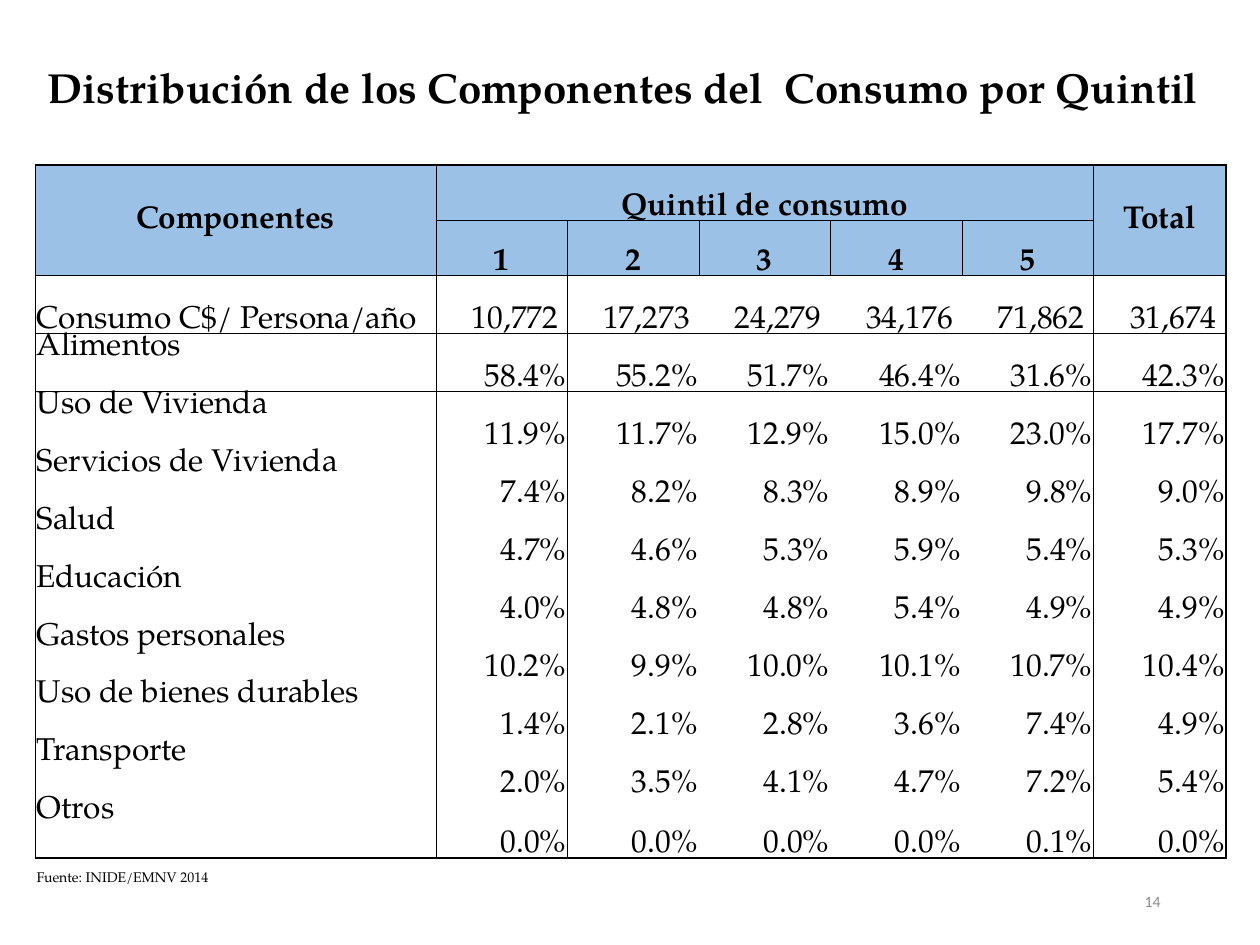
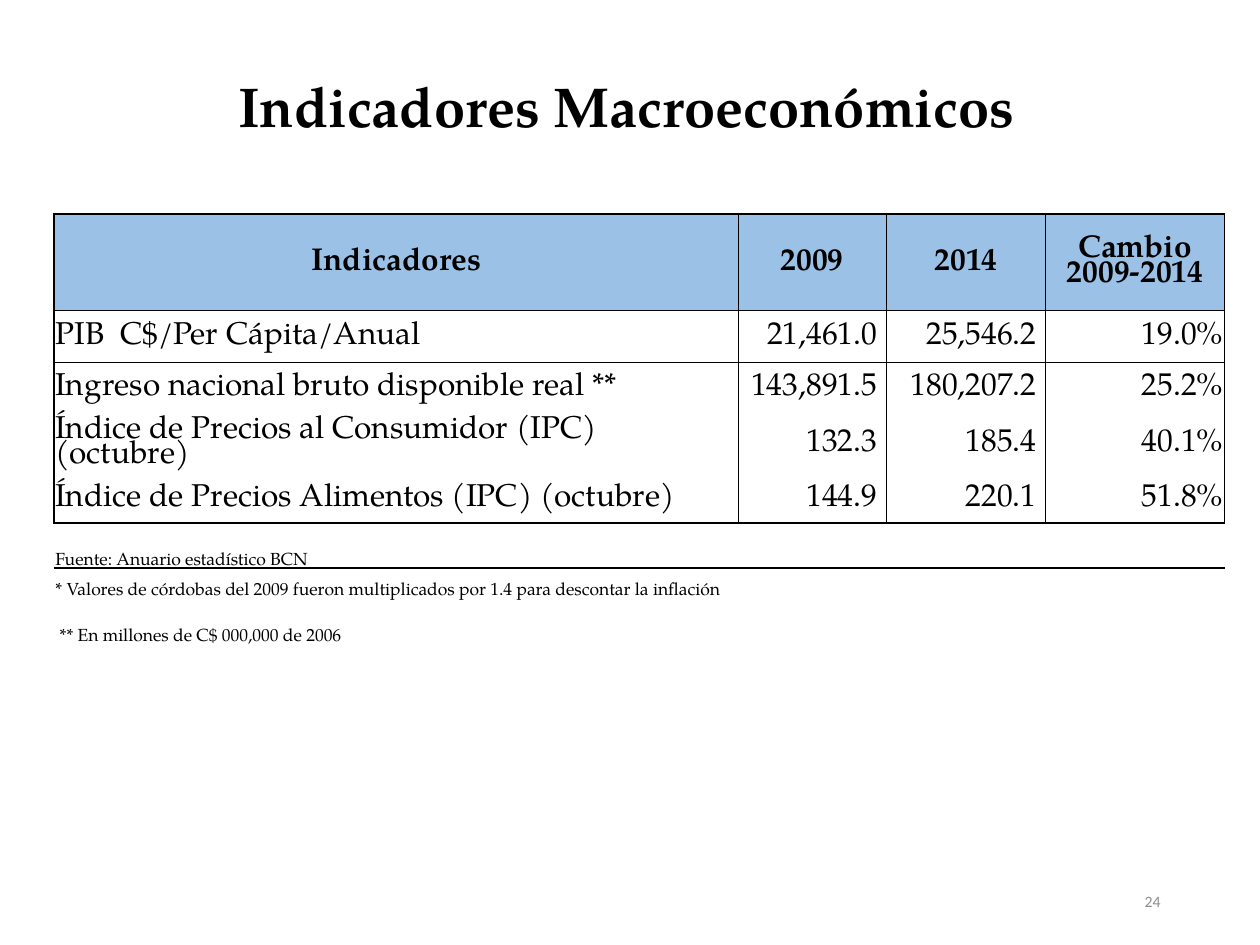
from dataclasses import dataclass

from lxml import etree
from pptx import Presentation
from pptx import util as u
from pptx.dml.color import RGBColor
from pptx.enum import text as t
from pptx.oxml import ns


@dataclass(frozen=True)
class Theme:
    font: str = "TeX Gyre Pagella"
    number_font: str = "Calibri"
    ink: str = "000000"
    header: str = "9BC2E6"
    paper: str = "FFFFFF"
    grey: str = "8C8C8C"
    cell_size: int = 18
    number_size: int = 9
    line_spacing: float = 0.8
    thick: float = 1
    thin: float = 0.5
    plain_table: str = "{2D5ABB26-0587-4C30-8999-92F81FD0307C}"


THEME = Theme()
ALIGN, ANCHOR = t.PP_ALIGN, t.MSO_ANCHOR

# Page grid: 100 columns by 75 rows
WIDTH, HEIGHT = u.Inches(10), u.Inches(7.5)
COLUMN, ROW = WIDTH / 100, HEIGHT / 75
NUMBER_BOX = (70.6, 69.5, 22.5, 4)


def place(box):
    left, top, width, height = box
    return [int(n) for n in (left * COLUMN, top * ROW, width * COLUMN, height * ROW)]


def set_all(target, values):
    for name, value in values.items():
        setattr(target, name, value)


def write(paragraph, words, size, align, bold=False, font=THEME.font, color=THEME.ink):
    paragraph.alignment = align
    run = paragraph.add_run()
    run.text = words
    set_all(run.font, {"name": font, "size": u.Pt(size), "bold": bold})
    run.font.color.rgb = RGBColor.from_string(color)


# Title and slide number
def add_title(slide, words, box, size, align):
    title = slide.shapes.title
    set_all(title, dict(zip(("left", "top", "width", "height"), place(box))))
    set_all(title.text_frame, {"vertical_anchor": ANCHOR.TOP, "word_wrap": True,
                               "auto_size": t.MSO_AUTO_SIZE.NONE})
    write(title.text_frame.paragraphs[0], words, size, align, bold=True)


def add_number(slide, number):
    frame = slide.shapes.add_textbox(*place(NUMBER_BOX)).text_frame
    set_all(frame, {"word_wrap": True, "vertical_anchor": ANCHOR.MIDDLE})
    write(frame.paragraphs[0], str(number), THEME.number_size, ALIGN.RIGHT,
          font=THEME.number_font, color=THEME.grey)


# Table with ruled header, boxed body and unruled note rows
@dataclass
class TablePlan:
    box: tuple
    columns: list
    heights: list
    rows: list
    merges: list
    header_rows: int
    note_start: int
    note_size: int
    dividers: set
    anchor: object
    ruled: tuple = ()
    body_fill: str = ""


def horizontal_rule(plan, edge):
    if edge in (0, plan.note_start):
        return THEME.thick
    return THEME.thin if edge <= plan.header_rows or edge in plan.ruled else 0


def vertical_rule(plan, row, edge):
    if row >= plan.note_start:
        return 0
    if edge in (0, len(plan.columns)):
        return THEME.thick
    return THEME.thin if row < plan.header_rows or edge in plan.dividers else 0


def draw_borders(cell, plan, row, column):
    rules = {
        "L": vertical_rule(plan, row, column),
        "R": vertical_rule(plan, row, column + max(cell.span_width, 1)),
        "T": horizontal_rule(plan, row),
        "B": horizontal_rule(plan, row + max(cell.span_height, 1)),
    }
    properties = cell._tc.get_or_add_tcPr()
    for side, weight in rules.items():
        if weight:
            line = etree.SubElement(properties, ns.qn(f"a:ln{side}"), w=str(u.Pt(weight)))
            fill = etree.SubElement(line, ns.qn("a:solidFill"))
            etree.SubElement(fill, ns.qn("a:srgbClr"), val=THEME.ink)


def format_cell(cell, plan, row, column, words):
    header, note = row < plan.header_rows, row >= plan.note_start
    inset = u.Inches(0.01)
    set_all(cell, {"margin_left": inset, "margin_right": inset, "margin_top": inset,
                   "margin_bottom": 0, "vertical_anchor": plan.anchor(row, column)})
    draw_borders(cell, plan, row, column)
    color = THEME.header if header else plan.body_fill
    if color:
        cell.fill.solid()
        cell.fill.fore_color.rgb = RGBColor.from_string(color)
    else:
        cell.fill.background()
    paragraph = cell.text_frame.paragraphs[0]
    paragraph.line_spacing = THEME.line_spacing
    if words:
        align = ALIGN.CENTER if header else ALIGN.RIGHT if column else ALIGN.LEFT
        size = plan.note_size if note else THEME.cell_size
        write(paragraph, words, size, align, bold=header)
    else:
        paragraph.font.size = u.Pt(plan.note_size)


def add_table(slide, plan):
    frame = slide.shapes.add_table(len(plan.heights), len(plan.columns), *place(plan.box))
    table = frame.table
    set_all(table, {"first_row": False, "horz_banding": False})
    table._tbl.tblPr.find(ns.qn("a:tableStyleId")).text = THEME.plain_table
    for column, width in zip(table.columns, plan.columns):
        column.width = int(width * COLUMN)
    for row, height in zip(table.rows, plan.heights):
        row.height = int(height * ROW)
    for top, left, bottom, right in plan.merges:
        table.cell(top, left).merge(table.cell(bottom, right))
    for row, words in enumerate(plan.rows):
        for column in range(len(plan.columns)):
            cell = table.cell(row, column)
            if not cell.is_spanned:
                format_cell(cell, plan, row, column,
                            words[column] if column < len(words) else "")


def new_slide(presentation, number):
    slide = presentation.slides.add_slide(presentation.slide_layouts[5])
    add_number(slide, number)
    return slide


# Consumption by quintile
def quintile_anchor(row, column):
    if row == 12 or (row == 0 and column in (0, 6)):
        return ANCHOR.MIDDLE
    return ANCHOR.TOP if column == 0 and row > 2 else ANCHOR.BOTTOM


def consumption_slide(presentation):
    slide = new_slide(presentation, 14)
    add_title(slide, "Distribución de los Componentes del  Consumo por Quintil",
              (2.8, 4.4, 94.5, 5), 24, ALIGN.LEFT)
    shares = [
        ("Alimentos", 58.4, 55.2, 51.7, 46.4, 31.6, 42.3),
        ("Uso de Vivienda", 11.9, 11.7, 12.9, 15.0, 23.0, 17.7),
        ("Servicios de Vivienda", 7.4, 8.2, 8.3, 8.9, 9.8, 9.0),
        ("Salud", 4.7, 4.6, 5.3, 5.9, 5.4, 5.3),
        ("Educación", 4.0, 4.8, 4.8, 5.4, 4.9, 4.9),
        ("Gastos personales", 10.2, 9.9, 10.0, 10.1, 10.7, 10.4),
        ("Uso de bienes durables", 1.4, 2.1, 2.8, 3.6, 7.4, 4.9),
        ("Transporte", 2.0, 3.5, 4.1, 4.7, 7.2, 5.4),
        ("Otros", 0.0, 0.0, 0.0, 0.0, 0.1, 0.0),
    ]
    amounts = (10772, 17273, 24279, 34176, 71862, 31674)
    rows = [
        ["Componentes", "Quintil de consumo", "", "", "", "", "Total"],
        ["", "1", "2", "3", "4", "5"],
        ["Consumo C$/ Persona/año"] + [f"{amount:,} " for amount in amounts],
        *[[name] + [f"{value:.1f}%" for value in values] for name, *values in shares],
        ["Fuente: INIDE/EMNV 2014"],
    ]
    add_table(slide, TablePlan(
        box=(2.8, 13.1, 94.5, 58.3),
        columns=[31.8] + [10.44] * 5 + [10.5],
        heights=[4.4] * 2 + [4.6] * 9 + [4.8, 3.3],
        rows=rows, merges=[(0, 0, 1, 0), (0, 1, 0, 5), (0, 6, 1, 6)],
        header_rows=2, note_start=12, note_size=8, dividers={1, 6},
        anchor=quintile_anchor, ruled=(3,)))


# Macroeconomic indicators
def indicator_anchor(row, column):
    return ANCHOR.BOTTOM if row == 5 else ANCHOR.MIDDLE


def indicators_slide(presentation):
    slide = new_slide(presentation, 24)
    add_title(slide, "Indicadores Macroeconómicos ", (2, 5.2, 96.6, 6.4), 32, ALIGN.CENTER)
    indicators = [
        ("PIB  C$/Per Cápita/Anual", 21461.0, 25546.2, 19.0),
        ("Ingreso nacional bruto disponible real **", 143891.5, 180207.2, 25.2),
        ("Índice de Precios al Consumidor (IPC) (octubre)", 132.3, 185.4, 40.1),
        ("Índice de Precios Alimentos (IPC) (octubre)", 144.9, 220.1, 51.8),
    ]
    rows = [
        ["Indicadores", "", "2009", "2014", "Cambio 2009-2014"],
        *[[name, "", f"{before:,.1f} ", f"{after:,.1f} ", f"{change}%"]
          for name, before, after, change in indicators],
        ["Fuente: Anuario estadístico BCN"],
        ["* Valores de córdobas del 2009 fueron multiplicados por 1.4 "
         "para descontar la inflación"],
        [" ** En millones de C$ 000,000 de 2006"],
    ]
    add_table(slide, TablePlan(
        box=(4.3, 17, 92.9, 34.4),
        columns=[53.4, 0.9, 11.75, 12.65, 14.2],
        heights=[7.6, 4.2] + [3.9] * 3 + [3.6] * 3,
        rows=rows,
        merges=[(row, 0, row, 1) for row in range(6)] + [(6, 0, 6, 4), (7, 1, 7, 2)],
        header_rows=1, note_start=5, note_size=10, dividers={2, 4},
        anchor=indicator_anchor, body_fill=THEME.paper))


def main():
    presentation = Presentation()
    set_all(presentation, {"slide_width": WIDTH, "slide_height": HEIGHT})
    consumption_slide(presentation)
    indicators_slide(presentation)
    presentation.save("out.pptx")


if __name__ == "__main__":
    main()
